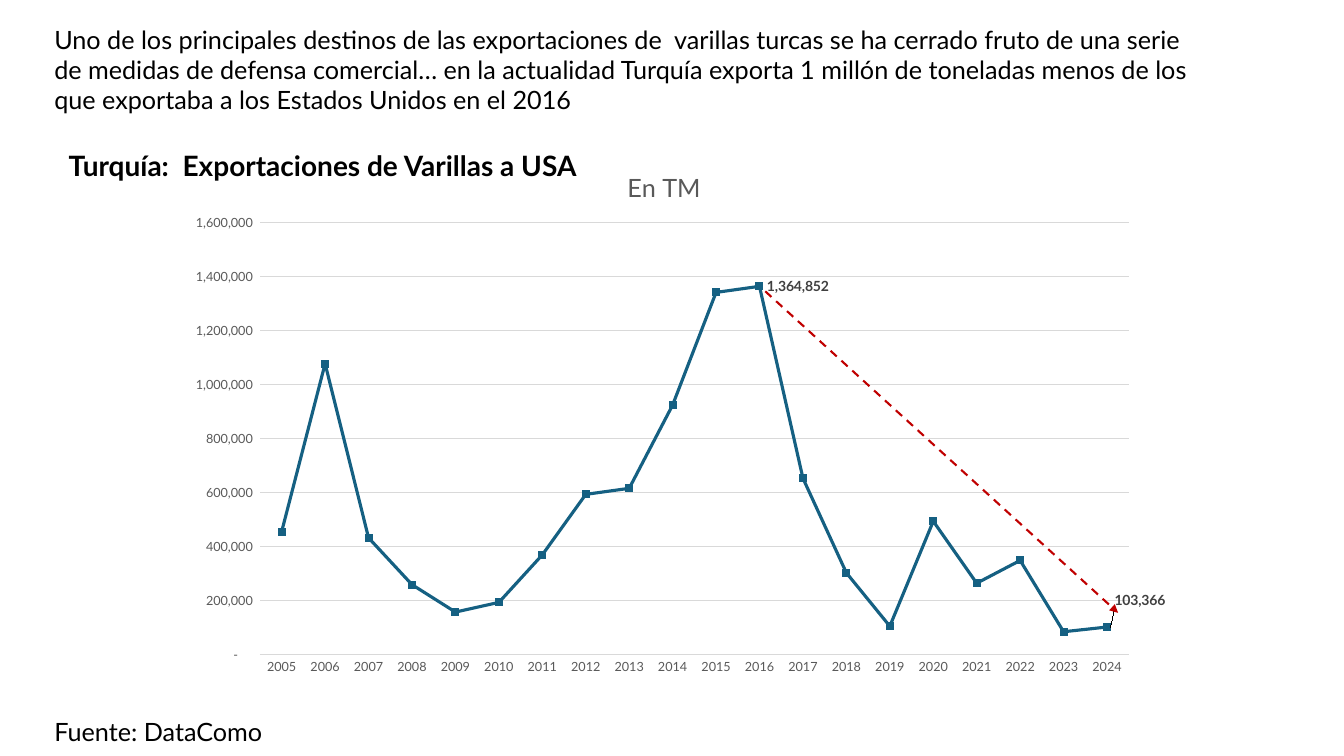
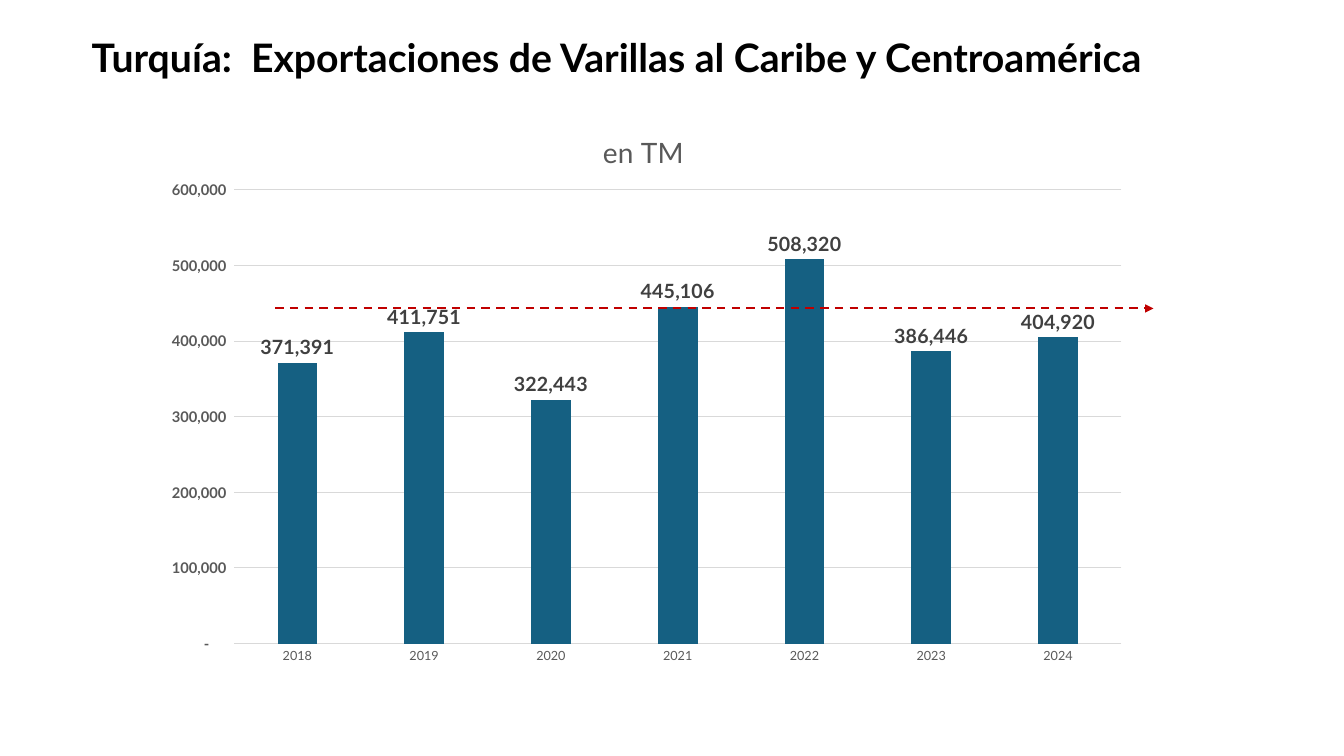
from lxml import etree
from pptx import Presentation
from pptx.chart.data import CategoryChartData
from pptx.dml.color import RGBColor
from pptx.enum.chart import XL_CHART_TYPE, XL_LABEL_POSITION, XL_TICK_MARK
from pptx.enum.dml import MSO_LINE
from pptx.enum.shapes import MSO_CONNECTOR
from pptx.enum.text import MSO_ANCHOR, MSO_AUTO_SIZE, PP_ALIGN
from pptx.oxml.ns import qn
from pptx.util import Inches, Pt

LINE, BARS = XL_CHART_TYPE.LINE, XL_CHART_TYPE.COLUMN_CLUSTERED
RIGHT, ABOVE = XL_LABEL_POSITION.RIGHT, XL_LABEL_POSITION.OUTSIDE_END
NO_TICK = XL_TICK_MARK.NONE

# Shared style
FONT = "Lato"
BLACK, BLUE, RED = "000000", "156082", "C00000"
GRAY, DARK, PALE = "595959", "404040", "D9D9D9"
TONS = '_(* #,##0_);_(* \\(#,##0\\);_(* "-"??_);_('

# Content
CLAIM = ("Uno de los principales destinos de las exportaciones de  varillas turcas "
         "se ha cerrado fruto de una serie de medidas de defensa comercial… en la "
         "actualidad Turquía exporta 1 millón de toneladas menos de los que "
         "exportaba a los Estados Unidos en el 2016")
USA = [456695, 1078511, 433571, 260322, 158689, 194580, 370559, 594550, 616878,
       925046, 1342406, 1364852, 653974, 303908, 106424, 495043, 265584, 349962,
       85820, 103366]
CARIB = [371391, 411751, 322443, 445106, 508320, 386446, 404920]
# Labelled points of the line: index and vertical shift as a share of the chart
MARKS = [(11, 0), (19, -0.05)]

# Boxes are left, top, width, height in inches; plots are shares of the chart
SLIDES = [
    dict(title="Turquía:  Exportaciones de Varillas a USA",
         place=(0.58, 1.42, 10.79, 0.44), size=20,
         texts=[(CLAIM, (0.44, 0.19, 11.67, 1.01)),
                ("Fuente: DataComo", (0.44, 7.06, 3.43, 0.4))],
         chart=dict(kind=LINE, box=(1.74, 1.42, 9.86, 5.38), first=2005, vals=USA,
                    head="En TM", size=18, spot=(0.45, 0.04),
                    plot=(0.085, 0.147, 0.874, 0.797),
                    top=1600000, step=200000, axis=(9, False)),
         arrow=(7.59, 2.89, 11.09, 6.08)),
    dict(title="Turquía:  Exportaciones de Varillas al Caribe y Centroamérica",
         place=(0.81, 0.28, 11.95, 0.57), size=28, texts=[],
         chart=dict(kind=BARS, box=(1.48, 1, 9.78, 5.7), first=2018, vals=CARIB,
                    head="en TM", size=20, spot=(0.455, 0.045),
                    plot=(0.086, 0.155, 0.9, 0.79),
                    top=600000, step=100000, axis=(10.5, True)),
         arrow=(2.73, 3.06, 11.44, 3.06)),
]


def paint(code):
    return RGBColor.from_string(code)


def style(font, size, code, bold=False):
    font.name, font.size, font.bold = FONT, Pt(size), bold
    font.color.rgb = paint(code)


def rule(line, code, width):
    line.color.rgb, line.width = paint(code), Pt(width)


def write(shape, text, size, bold=False):
    frame = shape.text_frame
    frame.text = text
    frame.word_wrap = True
    frame.auto_size = MSO_AUTO_SIZE.NONE
    frame.vertical_anchor = MSO_ANCHOR.TOP
    para = frame.paragraphs[0]
    para.alignment = PP_ALIGN.LEFT
    style(para.runs[0].font, size, BLACK, bold)


def layout(host, index, inner=False, edge=True, **parts):
    """Give a chart part a manual place in shares of the chart."""
    for old in host.findall(qn("c:layout")):
        host.remove(old)
    item = etree.Element(qn("c:layout"))
    host.insert(index, item)
    spec = etree.SubElement(item, qn("c:manualLayout"))
    rows = [("layoutTarget", "inner")] if inner else []
    if edge:
        rows += [("xMode", "edge"), ("yMode", "edge")]
    for tag, val in rows + list(parts.items()):
        etree.SubElement(spec, qn("c:" + tag)).set("val", str(val))


def add_chart(slide, kind, box, first, vals, head, size, spot, plot, top, step, axis):
    data = CategoryChartData(number_format="#,##0")
    data.categories = [str(first + i) for i in range(len(vals))]
    data.add_series("Series 1", vals)
    chart = slide.shapes.add_chart(kind, *map(Inches, box), data).chart
    style(chart.font, 10, BLACK)
    chart.has_legend = False

    # Heading and plot area
    chart.has_title = True
    title = chart.chart_title
    title.text_frame.text = head
    style(title.text_frame.paragraphs[0].runs[0].font, size, GRAY)
    title.include_in_layout = False
    layout(title._element, 1, x=spot[0], y=spot[1])
    area = chart._chartSpace.chart.plotArea
    layout(area, 0, inner=True, **dict(zip("xywh", plot)))

    # Axes
    cats, tons = chart.category_axis, chart.value_axis
    for part in (cats, tons):
        part.major_tick_mark = part.minor_tick_mark = NO_TICK
    style(cats.tick_labels.font, 9, GRAY)
    rule(cats.format.line, PALE, 0.75)
    style(tons.tick_labels.font, axis[0], GRAY, axis[1])
    tons.tick_labels.number_format = TONS
    tons.tick_labels.number_format_is_linked = False
    tons.format.line.fill.background()
    rule(tons.major_gridlines.format.line, PALE, 0.75)
    tons.minimum_scale, tons.maximum_scale, tons.major_unit = 0, top, step

    # Series and labels
    group = chart.plots[0]
    group.vary_by_categories = False
    series = group.series[0]
    if kind == LINE:
        series.smooth = False
        series.marker.style = None
        rule(series.format.line, BLUE, 2.25)
        for i, shift in MARKS:
            label = series.points[i].data_label
            style(label.font, 10, DARK, True)
            label.position = RIGHT
            if shift:
                node = series._element.find(qn("c:dLbls")).findall(qn("c:dLbl"))[-1]
                layout(node, 1, edge=False, x=0, y=shift)
    else:
        group.gap_width, group.overlap = 219, -27
        series.format.fill.solid()
        series.format.fill.fore_color.rgb = paint(BLUE)
        labels = series.data_labels
        labels.show_value = True
        labels.position = ABOVE
        style(labels.font, 14, DARK, True)


def add_arrow(slide, ends):
    arrow = slide.shapes.add_connector(MSO_CONNECTOR.STRAIGHT, *map(Inches, ends))
    rule(arrow.line, RED, 1.5)
    arrow.line.dash_style = MSO_LINE.DASH
    etree.SubElement(arrow.line._get_or_add_ln(), qn("a:tailEnd")).set("type", "triangle")
    etree.SubElement(arrow._element.spPr, qn("a:effectLst"))


def main():
    deck = Presentation()
    deck.slide_width, deck.slide_height = Inches(13.33), Inches(7.5)
    for page in SLIDES:
        slide = deck.slides.add_slide(deck.slide_layouts[5])
        title = slide.shapes.title
        title.left, title.top, title.width, title.height = map(Inches, page["place"])
        write(title, page["title"], page["size"], True)
        add_chart(slide, **page["chart"])
        for text, box in page["texts"]:
            write(slide.shapes.add_textbox(*map(Inches, box)), text, 18)
        add_arrow(slide, page["arrow"])
    deck.save("out.pptx")


if __name__ == "__main__":
    main()
